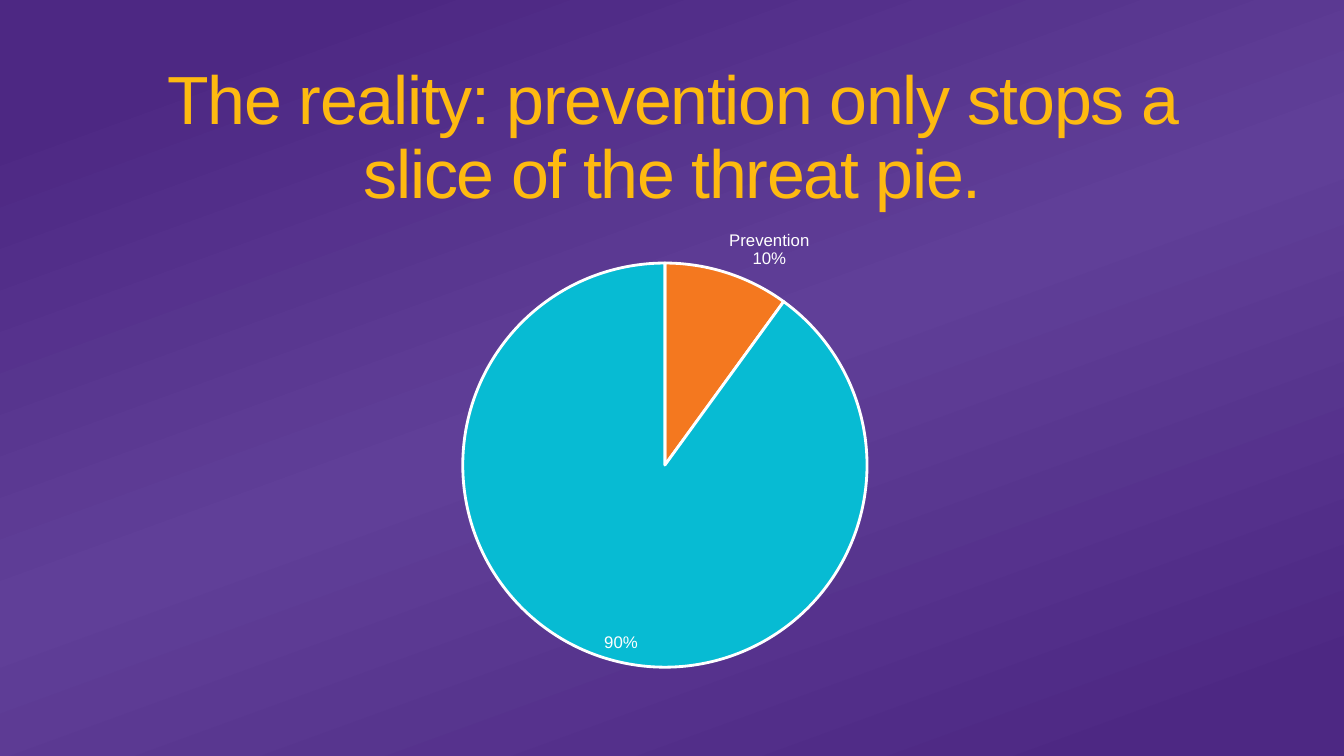
from lxml import etree
from copy import deepcopy
from pptx import Presentation
from pptx.chart.data import CategoryChartData
from pptx.dml.color import RGBColor
from pptx.enum.chart import XL_CHART_TYPE, XL_LABEL_POSITION
from pptx.enum.text import MSO_ANCHOR, PP_ALIGN
from pptx.oxml.ns import qn
from pptx.util import Inches, Pt

PIE = XL_CHART_TYPE.PIE
OUTSIDE = XL_LABEL_POSITION.OUTSIDE_END
INSIDE = XL_LABEL_POSITION.INSIDE_END
MIDDLE = MSO_ANCHOR.MIDDLE
CENTER = PP_ALIGN.CENTER

TITLE = "The reality: prevention only stops a slice of the threat pie."
SLICES = [("Prevention", 10, "F4781F"), ("", 90, "07BBD3")]
STOPS = [(0.10, "4D2883"), (0.50, "603F98"), (0.94, "4D2883")]
FONT = "Arial"
WHITE = "FFFFFF"
GOLD = "FEBA10"
LEFT, WIDTH = 0.92, 11.5
TITLE_TOP, TITLE_HEIGHT = 0.66, 1.45
CHART_TOP, CHART_HEIGHT = 2.11, 4.65
PIE_LEFT, PIE_TOP, PIE_SIZE = 4.59, 2.61, 4.01


def color(code):
    return RGBColor.from_string(code)


def style(font, size, code):
    font.name = FONT
    font.size = Pt(size)
    font.color.rgb = color(code)


def add_back(slide):
    fill = slide.background.fill
    fill.gradient()
    fill.gradient_angle = 290
    stops = next(slide.element.iter(qn("a:gsLst")))
    stops.append(deepcopy(stops[0]))
    for stop, (place, code) in zip(fill.gradient_stops, STOPS):
        stop.position = place
        stop.color.rgb = color(code)


def add_title(slide):
    box = slide.shapes.add_textbox(
        Inches(LEFT), Inches(TITLE_TOP), Inches(WIDTH), Inches(TITLE_HEIGHT))
    frame = box.text_frame
    frame.word_wrap = True
    frame.vertical_anchor = MIDDLE
    frame.text = TITLE
    para = frame.paragraphs[0]
    para.alignment = CENTER
    para.line_spacing = 0.9
    run = para.runs[0]
    style(run.font, 48.6, GOLD)
    run.font._element.set("spc", "-90")


def place_pie(chart):
    area = next(chart.element.iter(qn("c:plotArea")))
    for old in area.findall(qn("c:layout")):
        area.remove(old)
    layout = etree.Element(qn("c:layout"))
    manual = etree.SubElement(layout, qn("c:manualLayout"))
    parts = [
        ("layoutTarget", "inner"), ("xMode", "edge"), ("yMode", "edge"),
        ("x", (PIE_LEFT - LEFT) / WIDTH),
        ("y", (PIE_TOP - CHART_TOP) / CHART_HEIGHT),
        ("w", PIE_SIZE / WIDTH), ("h", PIE_SIZE / CHART_HEIGHT)]
    for name, value in parts:
        etree.SubElement(manual, qn("c:" + name)).set("val", str(value))
    area.insert(0, layout)


def add_labels(series):
    labels = series.data_labels
    labels.show_value = False
    labels.show_category_name = True
    labels.show_percentage = True
    labels.number_format = "0%"
    labels.number_format_is_linked = False
    labels.position = OUTSIDE
    style(labels.font, 12, WHITE)
    mark = etree.Element(qn("c:separator"))
    mark.text = "\n"
    labels._element.find(qn("c:showBubbleSize")).addnext(mark)

    label = series.points[1].data_label
    style(label.font, 12, WHITE)
    label.position = INSIDE
    item = next(series._element.iter(qn("c:dLbl")))
    item.find(qn("c:showVal")).set("val", "0")
    item.find(qn("c:showPercent")).set("val", "1")


def add_pie(slide):
    data = CategoryChartData()
    data.categories = [name for name, value, code in SLICES]
    data.add_series("Series 1", [value for name, value, code in SLICES])
    chart = slide.shapes.add_chart(
        PIE, Inches(LEFT), Inches(CHART_TOP), Inches(WIDTH),
        Inches(CHART_HEIGHT), data).chart
    chart.has_legend = False
    chart.has_title = False
    style(chart.font, 10, WHITE)
    plot = chart.plots[0]
    plot.vary_by_categories = True
    series = plot.series[0]
    for index, (name, value, code) in enumerate(SLICES):
        form = series.points[index].format
        form.fill.solid()
        form.fill.fore_color.rgb = color(code)
        form.line.color.rgb = color(WHITE)
        form.line.width = Pt(2)
    add_labels(series)
    place_pie(chart)


def main():
    deck = Presentation()
    deck.slide_width = Inches(13.33)
    deck.slide_height = Inches(7.5)
    slide = deck.slides.add_slide(deck.slide_layouts[6])
    add_back(slide)
    add_title(slide)
    add_pie(slide)
    deck.save("out.pptx")


if __name__ == "__main__":
    main()
